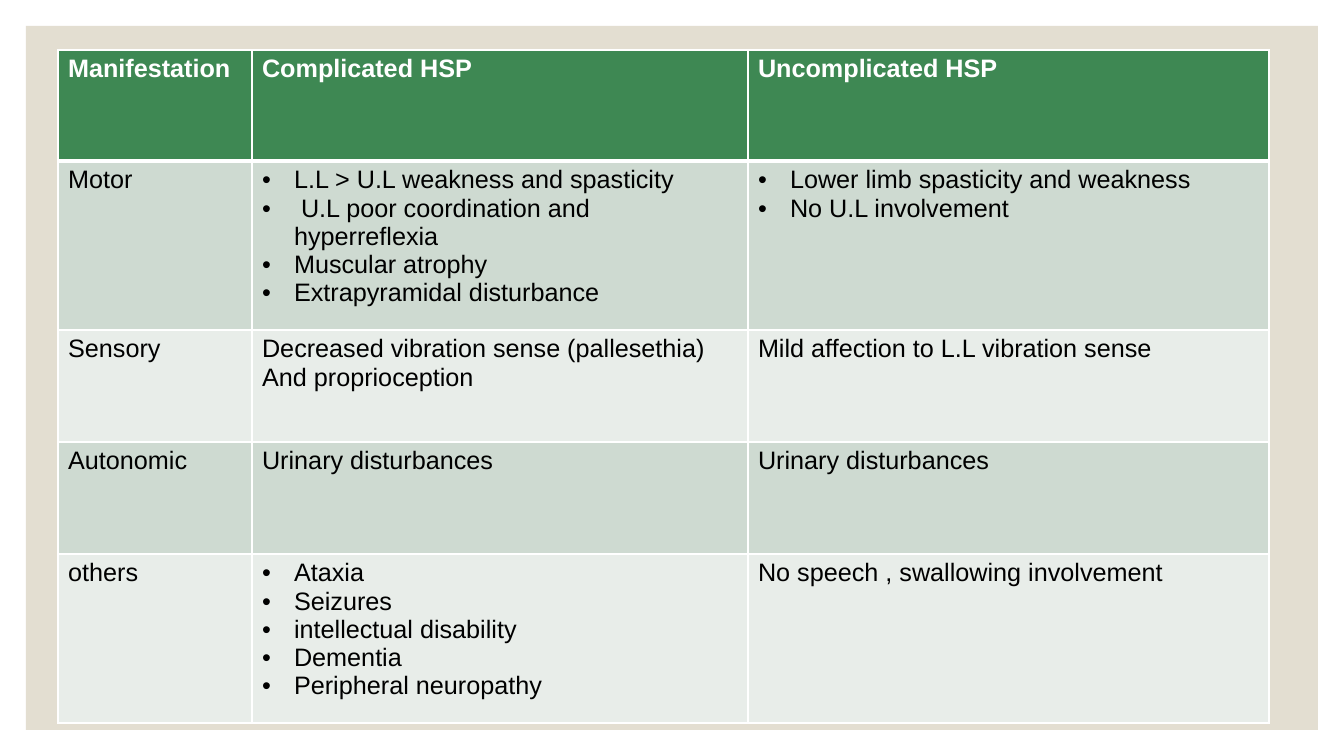
from lxml.etree import SubElement
from pptx import Presentation
from pptx.dml.color import RGBColor
from pptx.enum.shapes import MSO_SHAPE
from pptx.oxml.ns import qn
from pptx.util import Pt

PX = 12192000 / 1344
BULLET_INDENT = 32
COLUMN_WIDTHS = [194, 496, 521]
ROW_HEIGHTS = [111, 169, 112, 112, 169]
HEADER_FILL = "3E8853"
BAND_FILLS = ["E8EDE9", "CEDAD1"]

# A list is bulleted; a string is plain text, one paragraph a line.
ROWS = [
    ["Manifestation", "Complicated HSP", "Uncomplicated HSP"],
    ["Motor",
     ["L.L > U.L weakness and spasticity",
      " U.L poor coordination and hyperreflexia",
      "Muscular atrophy",
      "Extrapyramidal disturbance"],
     ["Lower limb spasticity and weakness", "No U.L involvement"]],
    ["Sensory",
     "Decreased vibration sense (pallesethia)\nAnd proprioception",
     "Mild affection to L.L vibration sense"],
    ["Autonomic", "Urinary disturbances", "Urinary disturbances"],
    ["others",
     ["Ataxia", "Seizures", "intellectual disability", "Dementia",
      "Peripheral neuropathy"],
     "No speech , swallowing involvement"],
]


def px(length):
    return round(length * PX)


def color(value):
    return RGBColor.from_string(value)


presentation = Presentation()
presentation.slide_width = px(1344)
presentation.slide_height = px(756)
slide = presentation.slides.add_slide(presentation.slide_layouts[6])

panel = slide.shapes.add_shape(MSO_SHAPE.RECTANGLE, px(26), px(26), px(1292), px(704))
panel.shadow.inherit = False
panel.fill.solid()
panel.fill.fore_color.rgb = color("E3DED1")
panel.line.fill.background()

table = slide.shapes.add_table(
    len(ROWS), len(COLUMN_WIDTHS), px(58), px(50),
    px(sum(COLUMN_WIDTHS)), px(sum(ROW_HEIGHTS))).table
for column, width in zip(table.columns, COLUMN_WIDTHS):
    column.width = px(width)
for row, height in zip(table.rows, ROW_HEIGHTS):
    row.height = px(height)

for row_index, row_contents in enumerate(ROWS):
    is_header = row_index == 0
    for column_index, content in enumerate(row_contents):
        cell = table.cell(row_index, column_index)
        bulleted = isinstance(content, list)
        cell.text_frame.text = "\n".join(content) if bulleted else content

        for paragraph in cell.text_frame.paragraphs:
            font = paragraph.runs[0].font
            font.name = "Arial"
            font.size = Pt(18)
            font.bold = is_header
            font.color.rgb = color("FFFFFF" if is_header else "000000")
            if bulleted:
                properties = paragraph._p.get_or_add_pPr()
                properties.set("marL", str(px(BULLET_INDENT)))
                properties.set("indent", str(-px(BULLET_INDENT)))
                SubElement(properties, qn("a:buFont"), typeface="Arial")
                SubElement(properties, qn("a:buChar"), char="•")

        # Borders come before the fill in the cell properties.
        cell_properties = cell._tc.get_or_add_tcPr()
        for side in ["lnL", "lnR", "lnT", "lnB"]:
            under_header = (row_index, side) in [(0, "lnB"), (1, "lnT")]
            border = SubElement(cell_properties, qn(f"a:{side}"),
                                w=str(Pt(3 if under_header else 1)))
            border_fill = SubElement(border, qn("a:solidFill"))
            SubElement(border_fill, qn("a:srgbClr"), val="FFFFFF")
        cell.fill.solid()
        cell.fill.fore_color.rgb = color(
            HEADER_FILL if is_header else BAND_FILLS[row_index % 2])

presentation.save("out.pptx")
